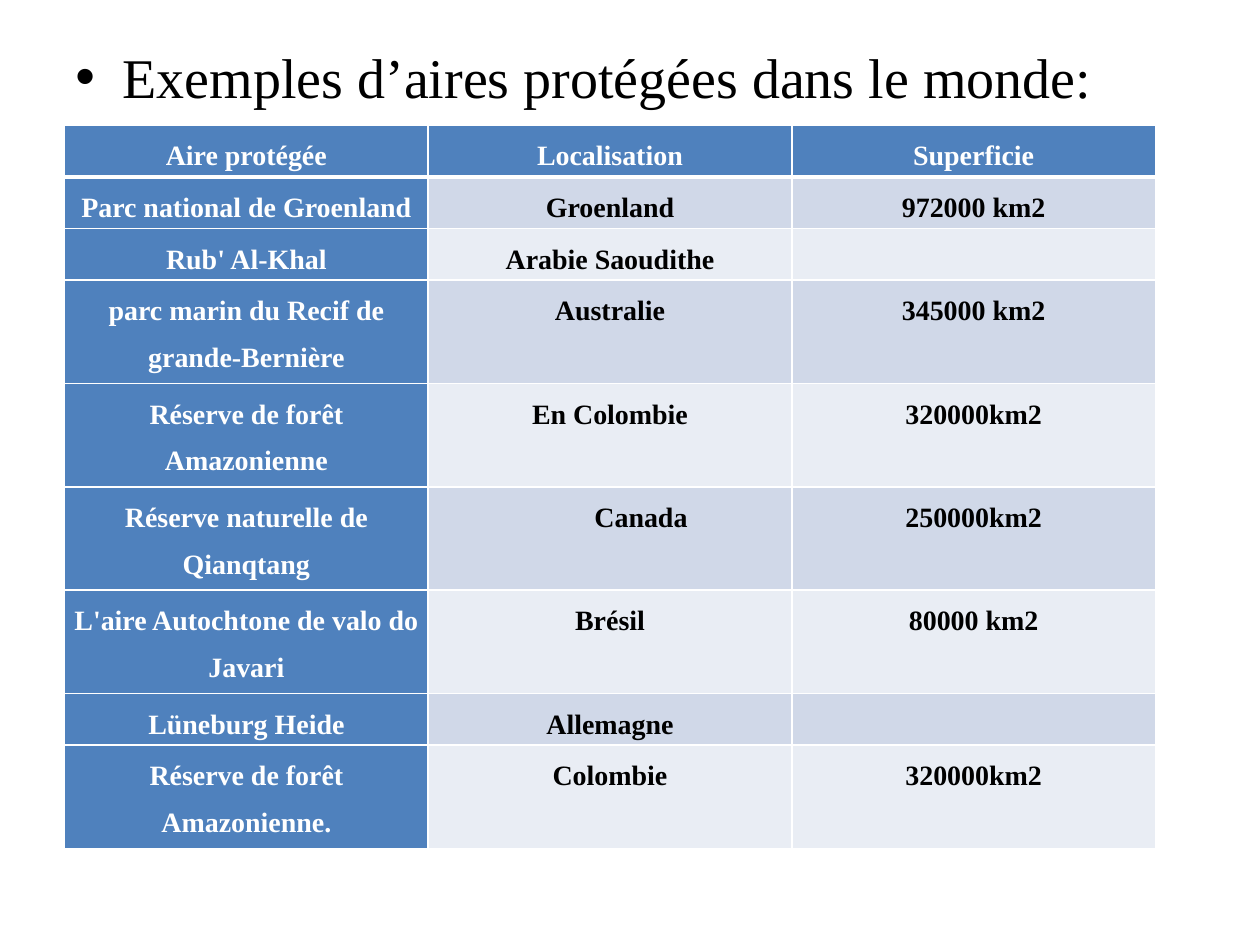
from lxml.etree import SubElement
from pptx import Presentation
from pptx.dml.color import RGBColor
from pptx.enum.text import PP_ALIGN
from pptx.oxml.ns import qn
from pptx.util import Pt

# Content
TITLE = "Exemples d’aires protégées dans le monde:"
ROWS = [
    ("Aire protégée", "Localisation", "Superficie"),
    ("Parc national de Groenland", "Groenland", "972000 km2"),
    ("Rub' Al-Khal", "Arabie Saoudithe", ""),
    ("parc marin du Recif de grande-Bernière", "Australie", "345000 km2"),
    ("Réserve de forêt Amazonienne", "En Colombie", "320000km2"),
    ("Réserve naturelle de Qianqtang", "Canada", "250000km2"),
    ("L'aire Autochtone de valo do Javari", "Brésil", "80000 km2"),
    ("Lüneburg Heide", "Allemagne", ""),
    ("Réserve de forêt Amazonienne.", "Colombie", "320000km2"),
]
LINES = [1, 1, 1, 2, 2, 2, 2, 1, 2]  # text lines per row
INDENT = {"Canada": 35.4}

# Format
WHITE = RGBColor(0xFF, 0xFF, 0xFF)
BLACK = RGBColor(0, 0, 0)
BLUE = RGBColor(0x4F, 0x81, 0xBD)
BANDS = [RGBColor(0xE9, 0xED, 0xF4), RGBColor(0xD0, 0xD8, 0xE8)]
FACE = "Times New Roman"
LINE_H, COL_W = 29.53, 207.8
INSETS = {"margin_left": Pt(4.5), "margin_right": Pt(4.5),
          "margin_top": 0, "margin_bottom": 0}


def style(item, **vals):
    for key, val in vals.items():
        setattr(item, key, val)


def write(para, text, size, color, bold):
    run = para.add_run()
    run.text = text
    style(run.font, name=FACE, size=Pt(size), bold=bold)
    run.font.color.rgb = color


def border(cell, row):
    props = cell._tc.get_or_add_tcPr()
    wide = {"lnT": row == 1, "lnB": row == 0}
    for side in ("lnL", "lnR", "lnT", "lnB"):
        width = 3 if wide.get(side) else 1
        line = SubElement(props, qn("a:" + side), w=str(Pt(width)))
        fill = SubElement(line, qn("a:solidFill"))
        SubElement(fill, qn("a:srgbClr"), val=str(WHITE))


deck = Presentation()
style(deck, slide_width=Pt(720), slide_height=Pt(540))
slide = deck.slides.add_slide(deck.slide_layouts[6])

# Bulleted title
box = slide.shapes.add_textbox(Pt(36), Pt(20.9), Pt(648), Pt(461.5))
box.text_frame.word_wrap = True
para = box.text_frame.paragraphs[0]
para.space_before = Pt(6.4)
write(para, TITLE, 32, BLACK, False)
props = para._p.get_or_add_pPr()
props.set("marL", str(Pt(27)))
props.set("indent", str(Pt(-27)))
SubElement(props, qn("a:buFont"), typeface="Arial")
SubElement(props, qn("a:buChar"), char="•")

# Table of protected areas
table = slide.shapes.add_table(
    len(ROWS), len(ROWS[0]), Pt(36.9), Pt(71.6),
    Pt(COL_W * len(ROWS[0])), Pt(LINE_H * sum(LINES))).table
for col in table.columns:
    col.width = Pt(COL_W)
for r, texts in enumerate(ROWS):
    table.rows[r].height = Pt(LINE_H * LINES[r])
    for c, text in enumerate(texts):
        cell = table.cell(r, c)
        head = r == 0 or c == 0
        style(cell, **INSETS)
        border(cell, r)
        cell.fill.solid()
        cell.fill.fore_color.rgb = BLUE if head else BANDS[r % 2]
        if text:
            para = cell.text_frame.paragraphs[0]
            style(para, alignment=PP_ALIGN.CENTER, line_spacing=1.5)
            write(para, text, 16, WHITE if head else BLACK, True)
            if text in INDENT:
                para._p.get_or_add_pPr().set("indent", str(Pt(INDENT[text])))

deck.save("out.pptx")
